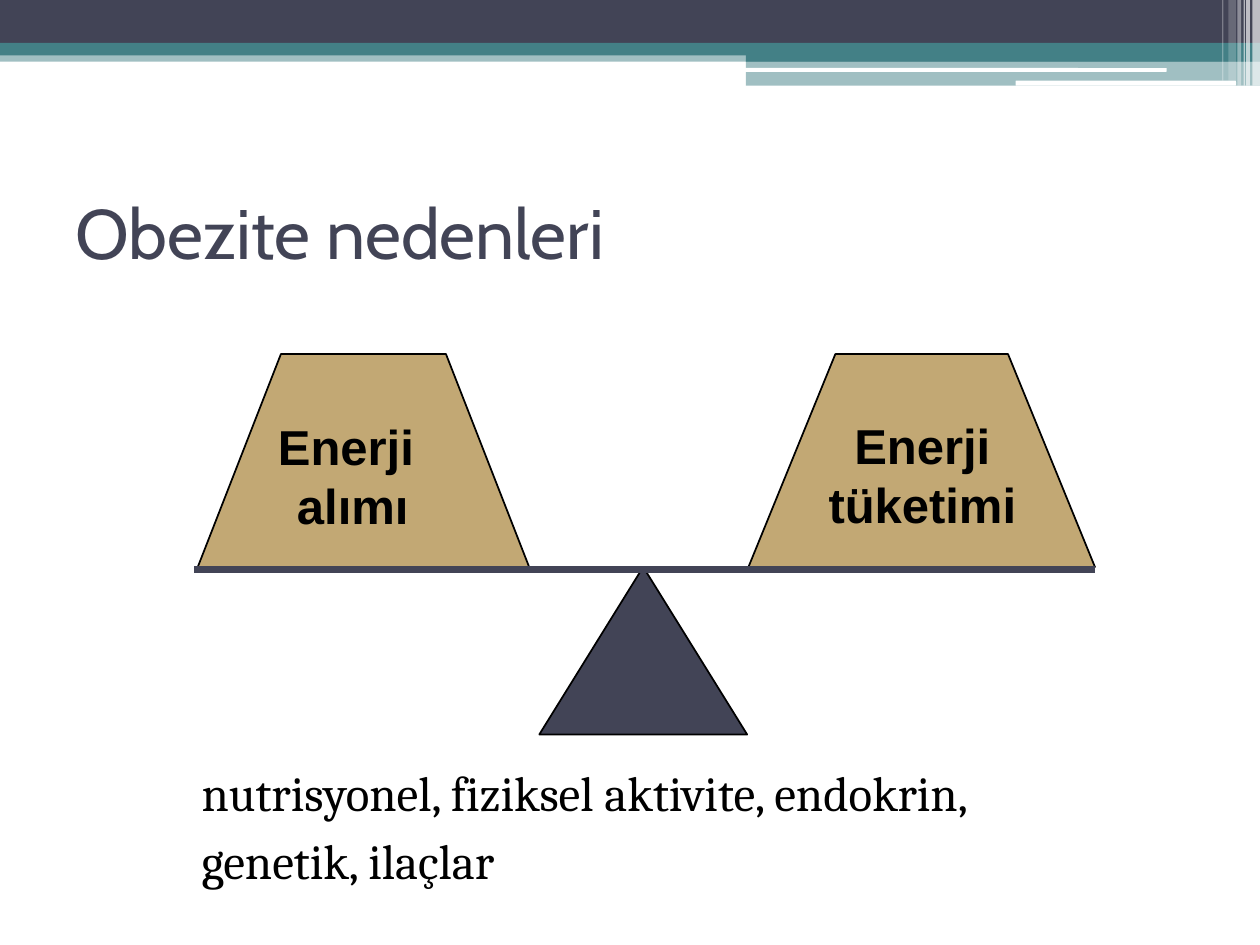
import lxml.etree
import pptx
import pptx.dml.color
import pptx.enum.shapes
import pptx.enum.text
import pptx.oxml.ns
import pptx.util

RGB = pptx.dml.color.RGBColor
SHAPE = pptx.enum.shapes.MSO_SHAPE
ALIGN = pptx.enum.text.PP_ALIGN
ANCHOR = pptx.enum.text.MSO_ANCHOR

NAVY = RGB(0x42, 0x44, 0x56)
TEAL = RGB(0x43, 0x80, 0x86)
SAND = RGB(0xC2, 0xA8, 0x74)
WHITE = RGB(0xFF, 0xFF, 0xFF)
BLACK = RGB(0, 0, 0)
SCALE = 9144


def px(num):
    """Turn px, a hundred to the inch, into EMU."""
    return pptx.util.Emu(int(num * SCALE))


def paint(shape, color, alpha=100, edge=None):
    """Give a shape its fill, opacity in percent and edge."""
    shape.shadow.inherit = False
    shape.fill.solid()
    shape.fill.fore_color.rgb = color
    if alpha < 100:
        tone = shape.fill._xPr.find(".//" + pptx.oxml.ns.qn("a:srgbClr"))
        node = lxml.etree.SubElement(tone, pptx.oxml.ns.qn("a:alpha"))
        node.set("val", str(alpha * 1000))
    if edge is None:
        shape.line.fill.background()
    else:
        shape.line.color.rgb = edge
        shape.line.width = pptx.util.Pt(1)


def block(slide, kind, box, color, alpha=100, edge=None):
    """Add a painted preset shape."""
    shape = slide.shapes.add_shape(kind, *map(px, box))
    paint(shape, color, alpha, edge)


def write(para, text, font, size, color, bold=False):
    """Add one run to a paragraph."""
    run = para.add_run()
    run.text = text
    run.font.name = font
    run.font.size = pptx.util.Pt(size)
    run.font.color.rgb = color
    run.font.bold = bold


def header(slide, box):
    """Draw the bands and the stripes at the right end."""
    left, top, width, height = box
    right = left + width
    half = left + 592
    bands = [
        (left, 40, width, 9, TEAL, 50),
        (left, 0, width, 34, NAVY, 100),
        (left, 34, width, 10, TEAL, 100),
        (half, 39, right - half, 10, TEAL, 100),
        (half, 48, right - half, 20, TEAL, 50),
    ]
    bars = [(591, 54, 335, 3), (806, 64, 175, 4)]
    stripes = [
        (6, 6, height, 65), (11, 3, height, 65), (13, 1, height, 60),
        (18, 3, height, 40), (25, 6, height - 4, 20), (30, 1, height - 4, 30),
    ]
    for x, y, w, h, color, alpha in bands:
        block(slide, SHAPE.RECTANGLE, (x, top + y, w, h), color, alpha)
    for x, y, w, h in bars:
        block(slide, SHAPE.ROUNDED_RECTANGLE, (left + x, top + y, w, h), WHITE)
    for back, w, h, alpha in stripes:
        block(slide, SHAPE.RECTANGLE, (right - back, top, w, h), WHITE, alpha)


def heading(slide, box, text):
    """Place and fill the title."""
    title = slide.shapes.title
    title.left, title.top, title.width, title.height = map(px, box)
    frame = title.text_frame
    frame.vertical_anchor = ANCHOR.MIDDLE
    para = frame.paragraphs[0]
    para.alignment = ALIGN.LEFT
    write(para, text, "Cabin", 40, NAVY)


def weight(slide, box):
    """Draw a weight that narrows by a quarter of its width on each side."""
    left, top, width, height = box
    inset = width / 4
    base = top + height
    path = slide.shapes.build_freeform(left, base, SCALE)
    path.add_line_segments([
        (left + inset, top), (left + width - inset, top), (left + width, base),
    ])
    paint(path.convert_to_shape(), SAND, edge=BLACK)


def label(slide, box, lines, wrap):
    """Write a bold centred label, one run to each line."""
    frame = slide.shapes.add_textbox(*map(px, box)).text_frame
    frame.word_wrap = wrap
    para = frame.paragraphs[0]
    para.alignment = ALIGN.CENTER
    for num, line in enumerate(lines):
        if num:
            para.add_line_break()
        write(para, line, "Arial", 28, BLACK, True)


def balance(slide, box):
    """Draw the weights, pivot, beam and labels."""
    left, top, width, height = box
    right = left + width
    beam = top + 171
    weight(slide, (right - 275, top, 275, 169))
    weight(slide, (left + 3, top, 263, 169))
    block(slide, SHAPE.ISOSCELES_TRIANGLE,
          (left + 274, top + 169, 165, height - 169), NAVY, edge=BLACK)
    line = slide.shapes.add_connector(
        pptx.enum.shapes.MSO_CONNECTOR.STRAIGHT,
        px(left), px(beam), px(right), px(beam))
    line.line.color.rgb = NAVY
    line.line.width = pptx.util.Pt(4.5)
    lxml.etree.SubElement(line._element.spPr, pptx.oxml.ns.qn("a:effectLst"))
    label(slide, (right - 273, top + 44, 272, 104), ["Enerji tüketimi"], True)
    label(slide, (left + 56, top + 45, 140, 104), ["Enerji ", "alımı"], False)


def causes(slide, box, lines):
    """List the causes, one paragraph to each line."""
    frame = slide.shapes.add_textbox(*map(px, box)).text_frame
    frame.word_wrap = True
    frame.margin_left = px(60)
    for num, line in enumerate(lines):
        para = frame.add_paragraph() if num else frame.paragraphs[0]
        para.space_before = pptx.util.Pt(5.6)
        write(para, line, "Cambria", 28, BLACK)


def main():
    """Build and save the slide."""
    deck = pptx.Presentation()
    deck.slide_width, deck.slide_height = px(1000), px(750)
    slide = deck.slides.add_slide(deck.slide_layouts[5])
    header(slide, (0, 0, 1000, 68))
    heading(slide, (50, 125, 900, 117), "Obezite nedenleri")
    balance(slide, (154, 281, 715, 302))
    causes(slide, (100, 600, 817, 159), [
        "nutrisyonel, fiziksel aktivite, endokrin,",
        "genetik, ilaçlar",
    ])
    deck.save("out.pptx")


if __name__ == "__main__":
    main()
